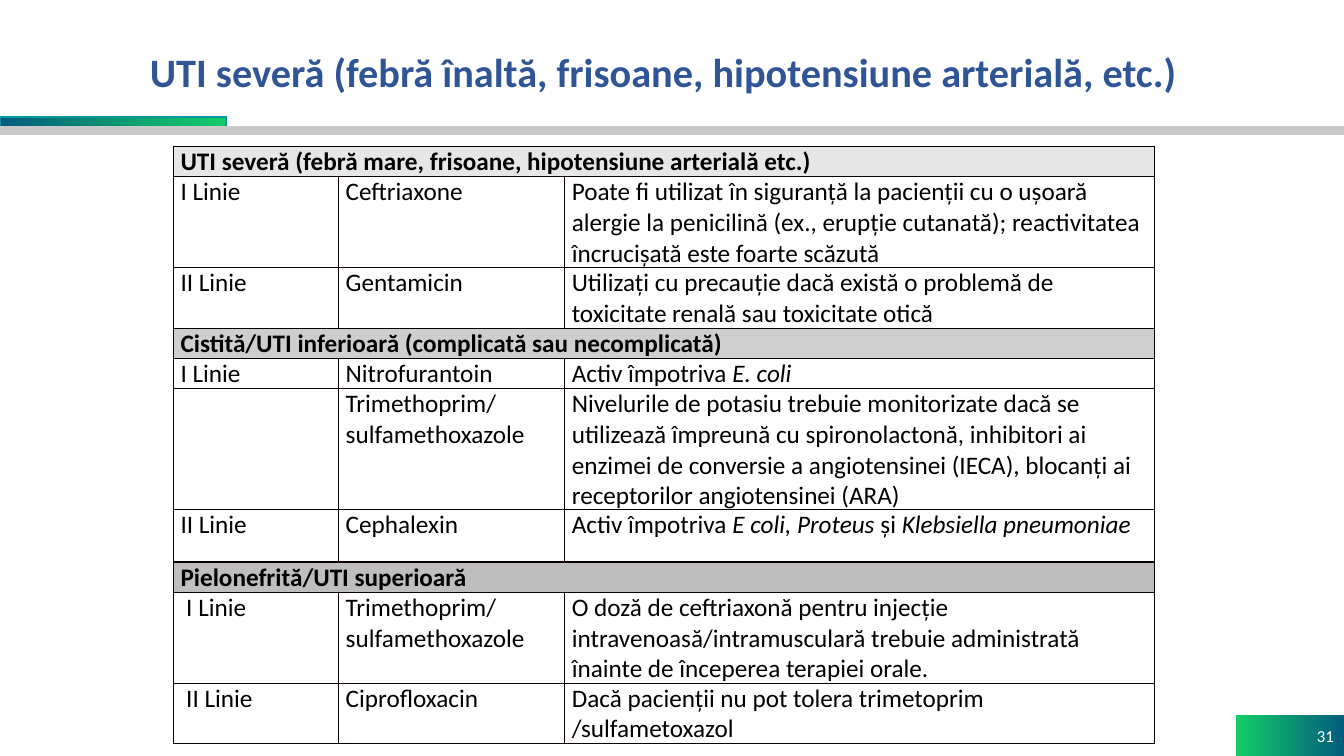
import pptx
import pptx.util
import pptx.dml.color
import pptx.enum.shapes
import pptx.enum.text
import pptx.oxml
import pptx.oxml.ns
from lxml import etree

Pt = pptx.util.Pt
RGB = pptx.dml.color.RGBColor.from_string
RECT = pptx.enum.shapes.MSO_SHAPE.RECTANGLE
ALIGN = pptx.enum.text.PP_ALIGN
MIDDLE = pptx.enum.text.MSO_ANCHOR.MIDDLE

THEME = {
    "font": "Calibri",
    "title": "2F5597", "text": "000000", "number": "FFFFFF",
    "green": "14CD68", "teal": "035C7D", "bar_line": "08979C", "rule": "C9C9C9",
    "border": "080000", "sections": ["E7E6E6", "CFCECE", "BEBEBE"],
    "title_size": 28.8, "table_size": 18, "number_size": 12,
}


def add_run(p, text, size, color, bold=False, italic=False):
    r = p.add_run()
    r.text = text
    r.font.name = THEME["font"]
    r.font.size = Pt(size)
    r.font.color.rgb = RGB(color)
    r.font.bold = bold
    r.font.italic = italic


def add_bar(left, top, width, height, colors, angle=0, line=None):
    """Rectangle with a solid fill for one colour, a gradient for two."""
    sp = s.shapes.add_shape(RECT, Pt(left), Pt(top), Pt(width), Pt(height))
    sp.shadow.inherit = False
    if len(colors) == 1:
        sp.fill.solid()
        sp.fill.fore_color.rgb = RGB(colors[0])
    else:
        sp.fill.gradient()
        sp.fill.gradient_angle = angle
        for stop, color in zip(sp.fill.gradient_stops, colors):
            stop.color.rgb = RGB(color)
    if line:
        sp.line.color.rgb = RGB(line)
        sp.line.width = Pt(1)
    else:
        sp.line.fill.background()
    return sp


prs = pptx.Presentation()
prs.slide_width, prs.slide_height = Pt(960), Pt(540)
s = prs.slides.add_slide(prs.slide_layouts[6])

# Header bars and page number
add_bar(0, 83.5, 161.5, 7.2, [THEME["teal"], THEME["green"]], 14, THEME["bar_line"])
add_bar(0, 90.5, 960, 5.5, [THEME["rule"]], line=THEME["rule"])
sp = add_bar(883, 511, 77, 29, [THEME["green"], THEME["teal"]])
tf = sp.text_frame
tf.vertical_anchor = MIDDLE
p = tf.paragraphs[0]
p.alignment = ALIGN.RIGHT
add_run(p, "31", THEME["number_size"], THEME["number"])

# Title
sp = s.shapes.add_textbox(Pt(66), Pt(26), Pt(816), Pt(54))
tf = sp.text_frame
tf.word_wrap = True
tf.vertical_anchor = MIDDLE
p = tf.paragraphs[0]
p.alignment = ALIGN.CENTER
p.line_spacing = 0.9
add_run(p, "UTI severă (febră înaltă, frisoane, hipotensiune arterială, etc.)",
        THEME["title_size"], THEME["title"], bold=True)

# Treatment table: one-cell rows are section headings, *...* marks italics
rows = [
    (1, ["UTI severă (febră mare, frisoane, hipotensiune arterială etc.)"]),
    (3, ["I Linie", "Ceftriaxone",
         "Poate fi utilizat în siguranță la pacienții cu o ușoară alergie la penicilină "
         "(ex., erupție cutanată); reactivitatea încrucișată este foarte scăzută"]),
    (2, ["II Linie", "Gentamicin",
         "Utilizați cu precauție dacă există o problemă de toxicitate renală "
         "sau toxicitate otică"]),
    (1, ["Cistită/UTI inferioară (complicată sau necomplicată)"]),
    (1, ["I Linie", "Nitrofurantoin", "Activ împotriva *E. coli*"]),
    (4, ["", "Trimethoprim/sulfamethoxazole",
         "Nivelurile de potasiu trebuie monitorizate dacă se utilizează împreună cu "
         "spironolactonă, inhibitori ai enzimei de conversie a angiotensinei (IECA), "
         "blocanți ai receptorilor angiotensinei (ARA)"]),
    (2, ["II Linie", "Cephalexin",
         "Activ împotriva *E coli, Proteus* și *Klebsiella pneumoniae*"]),
    (1, ["Pielonefrită/UTI superioară"]),
    (3, [" I Linie", "Trimethoprim/sulfamethoxazole",
         "O doză de ceftriaxonă pentru injecție intravenoasă/intramusculară trebuie "
         "administrată înainte de începerea terapiei orale."]),
    (2, [" II Linie", "Ciprofloxacin",
         "Dacă pacienții nu pot tolera trimetoprim /sulfametoxazol"]),
]
col_widths = [118, 161.5, 421]
line_height = 18.7

frame = s.shapes.add_table(len(rows), len(col_widths), Pt(124), Pt(104.7),
                           Pt(sum(col_widths)),
                           Pt(line_height * sum(lines for lines, _ in rows)))
table = frame.table
table.first_row = table.horz_banding = False
for col, width in zip(table.columns, col_widths):
    col.width = Pt(width)

section_fills = iter(THEME["sections"])
for i, (lines, texts) in enumerate(rows):
    table.rows[i].height = Pt(line_height * lines)
    is_section = len(texts) == 1
    if is_section:
        table.cell(i, 0).merge(table.cell(i, 2))
        section_fill = RGB(next(section_fills))
    for j in range(len(col_widths)):
        cell = table.cell(i, j)
        cell.margin_left = cell.margin_right = Pt(5)
        cell.margin_top = cell.margin_bottom = 0
        if is_section:
            cell.fill.solid()
            cell.fill.fore_color.rgb = section_fill
        else:
            cell.fill.background()
        tcPr = cell._tc.get_or_add_tcPr()
        for k, side in enumerate(["lnL", "lnR", "lnT", "lnB"]):
            ln = etree.Element(pptx.oxml.ns.qn("a:" + side), w=str(Pt(1)))
            fill = etree.SubElement(ln, pptx.oxml.ns.qn("a:solidFill"))
            etree.SubElement(fill, pptx.oxml.ns.qn("a:srgbClr"), val=THEME["border"])
            tcPr.insert(k, ln)
        if j < len(texts):
            p = cell.text_frame.paragraphs[0]
            for k, part in enumerate(texts[j].split("*")):
                if part:
                    add_run(p, part, THEME["table_size"], THEME["text"],
                            bold=is_section, italic=k % 2 == 1)

prs.save("out.pptx")
